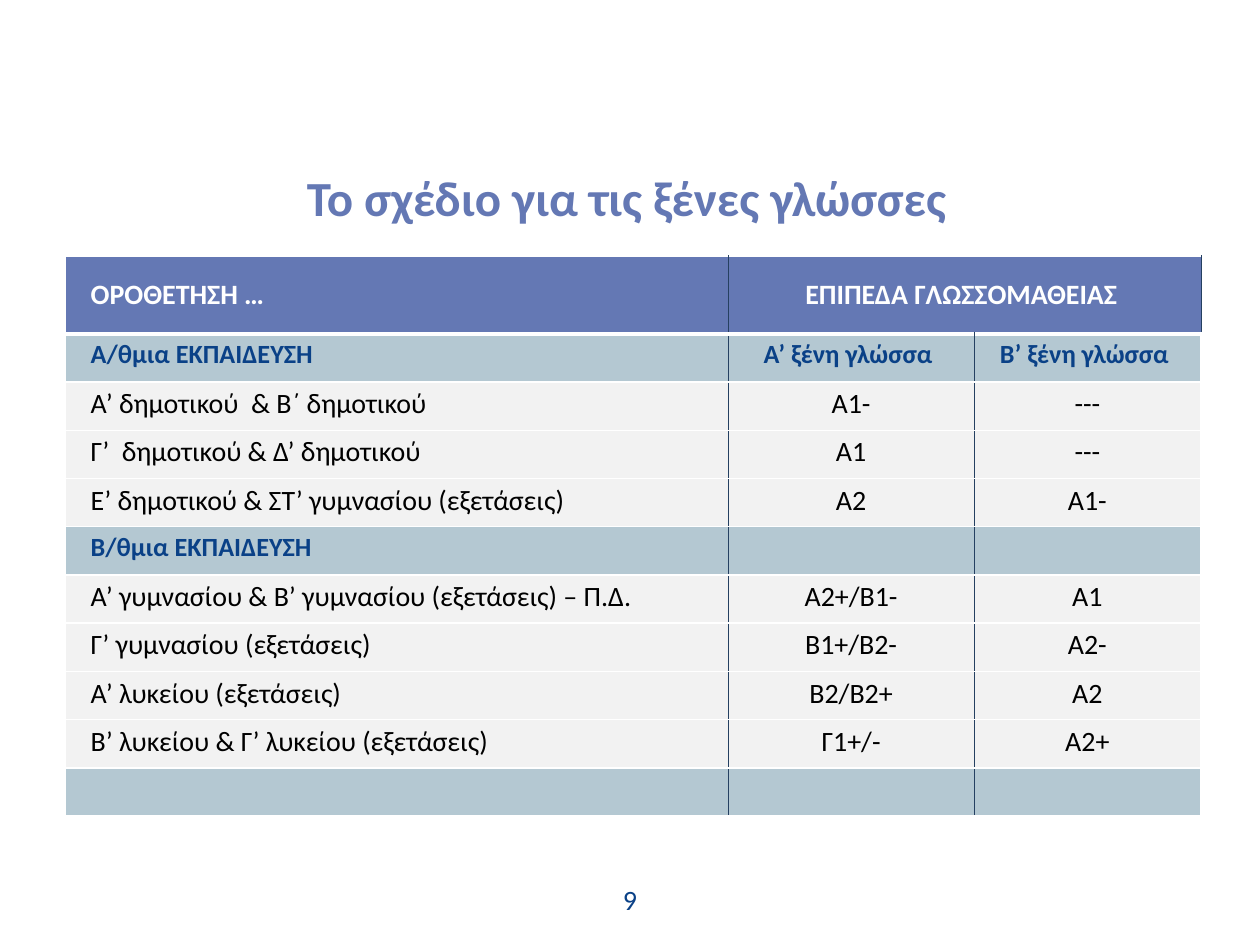
from dataclasses import dataclass

from lxml.etree import SubElement
from pptx import Presentation
from pptx.dml.color import RGBColor
from pptx.enum.text import MSO_ANCHOR as Anchor, PP_ALIGN as Align
from pptx.oxml.ns import qn
from pptx.util import Inches, Pt

FONT = "Calibri"
WHITE = RGBColor(0xFF, 0xFF, 0xFF)
BLACK = RGBColor(0x00, 0x00, 0x00)
INDIGO = RGBColor(0x64, 0x78, 0xB4)
NAVY = RGBColor(0x0A, 0x41, 0x87)
RULE = RGBColor(0x25, 0x40, 0x61)
STEEL = RGBColor(0xB4, 0xC8, 0xD2)
PALE = RGBColor(0xF2, 0xF2, 0xF2)


@dataclass(frozen=True)
class TextStyle:
    size: int
    color: RGBColor
    bold: bool = False


@dataclass(frozen=True)
class RowStyle:
    text: TextStyle
    fill: RGBColor
    anchor: Anchor = Anchor.TOP


@dataclass(frozen=True)
class Row:
    style: RowStyle
    stage: str = ""
    first_language: str = ""
    second_language: str = ""


HEADER = RowStyle(TextStyle(16, WHITE, True), INDIGO, Anchor.MIDDLE)
SECTION = RowStyle(TextStyle(15, NAVY, True), STEEL)
LEVEL = RowStyle(TextStyle(16, BLACK), PALE)

ROWS = [
    Row(HEADER, "ΟΡΟΘΕΤΗΣΗ …", "ΕΠΙΠΕΔΑ ΓΛΩΣΣΟΜΑΘΕΙΑΣ "),
    Row(SECTION, "Α/θμια ΕΚΠΑΙΔΕΥΣΗ", "Α’ ξένη γλώσσα ", "Β’ ξένη γλώσσα "),
    Row(LEVEL, "Α’ δημοτικού  & Β΄ δημοτικού", "Α1-", "---"),
    Row(LEVEL, "Γ’  δημοτικού & Δ’ δημοτικού", "Α1", "---"),
    Row(LEVEL, "Ε’ δημοτικού & ΣΤ’ γυμνασίου (εξετάσεις)", "Α2", "Α1-"),
    Row(SECTION, "Β/θμια ΕΚΠΑΙΔΕΥΣΗ"),
    Row(LEVEL, "Α’ γυμνασίου & Β’ γυμνασίου (εξετάσεις) – Π.Δ.", "Α2+/Β1-", "Α1"),
    Row(LEVEL, "Γ’ γυμνασίου (εξετάσεις)", "Β1+/Β2-", "Α2-"),
    Row(LEVEL, "Α’ λυκείου (εξετάσεις)", "Β2/Β2+", "Α2"),
    Row(LEVEL, "Β’ λυκείου & Γ’ λυκείου (εξετάσεις)", "Γ1+/-", "Α2+"),
    Row(SECTION),
]
COLUMN_WIDTHS = [5.26, 1.95, 1.8]
TABLE_HEIGHT, HEADER_HEIGHT = 4.45, 0.62


def set_all(target, values: dict) -> None:
    for name, value in values.items():
        setattr(target, name, value)


def write(para, text: str, style: TextStyle, align: Align) -> None:
    para.alignment = align
    if not text:
        # An empty cell still needs a text size, or its row grows.
        SubElement(para._p, qn("a:endParaRPr"), sz=str(style.size * 100))
        return
    span = para.add_run()
    span.text = text
    set_all(span.font, {"name": FONT, "size": Pt(style.size), "bold": style.bold})
    span.font.color.rgb = style.color


def add_text(page, text: str, style: TextStyle, left: float, top: float,
             width: float, height: float) -> None:
    box = page.shapes.add_textbox(Inches(left), Inches(top), Inches(width), Inches(height))
    set_all(box.text_frame, {"word_wrap": True, "vertical_anchor": Anchor.MIDDLE})
    write(box.text_frame.paragraphs[0], text, style, Align.CENTER)


def add_border(cell, side: str, color: RGBColor, points: float) -> None:
    line = SubElement(cell._tc.get_or_add_tcPr(), qn(f"a:ln{side}"), w=str(Pt(points)))
    SubElement(SubElement(line, qn("a:solidFill")), qn("a:srgbClr"), val=str(color))


def style_cell(cell, row: int, column: int, style: RowStyle) -> None:
    outer, inner = (WHITE, 1), (RULE, 0.25)
    borders = {
        "L": inner if column > 0 else outer,
        "R": inner if column < len(COLUMN_WIDTHS) - 1 else outer,
        "T": (WHITE, 3 if row == 1 else 1),
        "B": (WHITE, 3 if row == 0 else 1),
    }
    for side, (color, points) in borders.items():
        add_border(cell, side, color, points)
    cell.fill.solid()
    cell.fill.fore_color.rgb = style.fill
    set_all(cell, {
        "margin_left": Inches(0.1), "margin_right": Inches(0.1),
        "margin_top": Inches(0.04), "margin_bottom": Inches(0.04),
        "vertical_anchor": style.anchor,
    })


def add_levels_table(page) -> None:
    table = page.shapes.add_table(
        len(ROWS), len(COLUMN_WIDTHS), Inches(0.52), Inches(2.03),
        Inches(sum(COLUMN_WIDTHS)), Inches(TABLE_HEIGHT)).table
    for column, width in zip(table.columns, COLUMN_WIDTHS):
        column.width = Inches(width)
    body_height = (TABLE_HEIGHT - HEADER_HEIGHT) / (len(ROWS) - 1)
    for r, row in enumerate(ROWS):
        table.rows[r].height = Inches(body_height if r else HEADER_HEIGHT)
        for c, text in enumerate((row.stage, row.first_language, row.second_language)):
            cell = table.cell(r, c)
            style_cell(cell, r, c, row.style)
            para = cell.text_frame.paragraphs[0]
            write(para, text, row.style.text, Align.CENTER if c else Align.LEFT)
            if c == 0:
                para._p.get_or_add_pPr().set("marL", str(Inches(0.1)))
    table.cell(0, 1).merge(table.cell(0, 2))


def main() -> None:
    deck = Presentation()
    set_all(deck, {"slide_width": Inches(10), "slide_height": Inches(7.5)})
    page = deck.slides.add_slide(deck.slide_layouts[6])
    add_text(page, "Το σχέδιο για τις ξένες γλώσσες ", TextStyle(28, INDIGO, True),
             0.5, 1.25, 9.03, 0.62)
    add_levels_table(page)
    add_text(page, "9", TextStyle(16, NAVY), 4.22, 6.94, 1.56, 0.4)
    deck.save("out.pptx")


if __name__ == "__main__":
    main()
